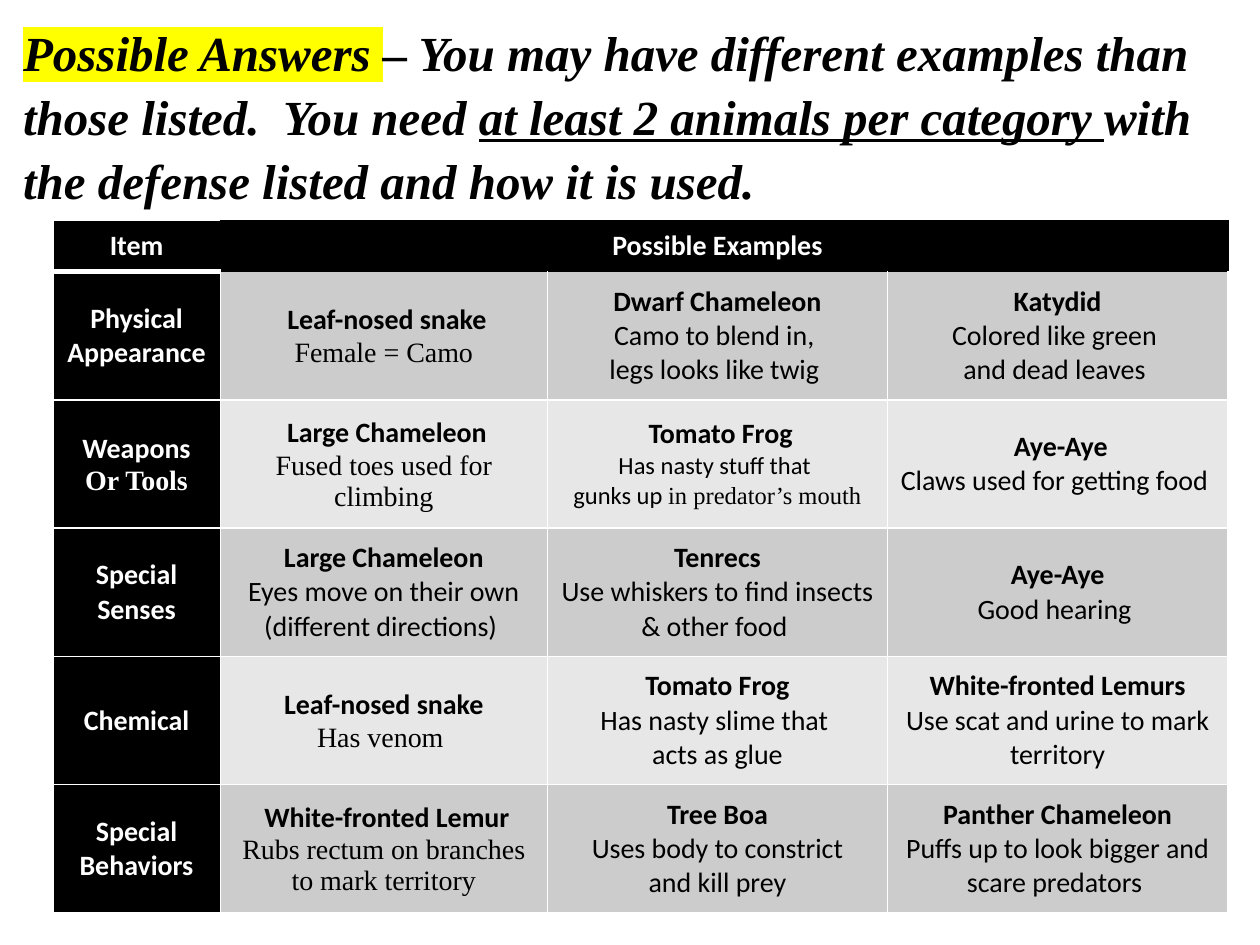
import pptx
import pptx.dml.color
import pptx.enum.text
import pptx.oxml.ns
import pptx.util
from lxml import etree

Pt = pptx.util.Pt
RGBColor = pptx.dml.color.RGBColor
Align = pptx.enum.text.PP_ALIGN
Anchor = pptx.enum.text.MSO_ANCHOR
qn = pptx.oxml.ns.qn

BLACK = RGBColor(0x00, 0x00, 0x00)
WHITE = RGBColor(0xFF, 0xFF, 0xFF)
YELLOW = RGBColor(0xFF, 0xFF, 0x00)
DARK_BAND = RGBColor(0xCC, 0xCC, 0xCC)
LIGHT_BAND = RGBColor(0xE7, 0xE7, 0xE7)

SERIF = {"name": "Times New Roman"}
SMALL = {"size": Pt(14)}
SMALL_SERIF = {**SERIF, **SMALL}

TITLE = [
    ("Possible Answers ", {"highlight": YELLOW}),
    ("– You may have different examples than those listed.  You need ", {}),
    ("at least 2 animals per category ", {"underline": True}),
    ("with the defense listed and how it is used.", {}),
]

# A cell is a list of paragraphs; a paragraph is a string or a list of (text, format) runs.
HEADER = [["Item"], [], ["Possible Examples"], []]
ROWS = [
    [["Physical Appearance"],
     [" Leaf-nosed snake", [("Female = Camo", SERIF)]],
     ["Dwarf Chameleon", "Camo to blend in, \nlegs looks like twig "],
     ["Katydid", "Colored like green \nand dead leaves "]],
    [["Weapons", [("Or Tools", SERIF)]],
     [" Large Chameleon", [("Fused toes used for climbing", SERIF)]],
     [" Tomato Frog", [("Has nasty stuff that ", SMALL)],
      [("gunks up ", SMALL), ("in predator’s mouth", SMALL_SERIF)]],
     [" Aye-Aye", "Claws used for getting food "]],
    [["Special Senses"],
     ["Large Chameleon", "Eyes move on their own", "(different directions) "],
     ["Tenrecs", "Use whiskers to find insects & other food "],
     ["Aye-Aye", "Good hearing "]],
    [["Chemical"],
     ["Leaf-nosed snake", [("Has venom ", SERIF)]],
     ["Tomato Frog", "Has nasty slime that ", "acts as glue"],
     ["White-fronted Lemurs", "Use scat and urine to mark territory"]],
    [["Special Behaviors"],
     [" White-fronted Lemur", [("Rubs rectum on branches to mark territory", SERIF)]],
     ["Tree Boa", "Uses body to constrict\n and kill prey "],
     ["Panther Chameleon", "Puffs up to look bigger and scare predators "]],
]
COLUMN_WIDTHS = [95.7, 186.9, 194.4, 194.4]
HEADER_HEIGHT, ROW_HEIGHT = 29.3, 73.3


class Deck:
    title_style = {"name": "Times New Roman", "size": Pt(28), "bold": True,
                   "italic": True, "color": BLACK}
    cell_style = {"name": "Calibri", "size": Pt(16)}

    def __init__(self, width, height):
        self.prs = pptx.Presentation()
        self.prs.slide_width, self.prs.slide_height = Pt(width), Pt(height)
        self.s = self.prs.slides.add_slide(self.prs.slide_layouts[5])

    def run(self, p, text, style):
        """Add text to a paragraph, turning newlines into line breaks."""
        for i, line in enumerate(text.split("\n")):
            if i:
                p.add_line_break()
            r = p.add_run()
            r.text = line
            for key, value in style.items():
                if key == "color":
                    r.font.color.rgb = value
                elif key != "highlight":
                    setattr(r.font, key, value)
            if "highlight" in style:
                mark = etree.Element(qn("a:highlight"))
                etree.SubElement(mark, qn("a:srgbClr"), val=str(style["highlight"]))
                r.font._element.find(qn("a:solidFill")).addnext(mark)

    def title(self, runs, left, top, width, height):
        sp = self.s.shapes.title
        sp.left, sp.top, sp.width, sp.height = map(Pt, (left, top, width, height))
        tf = sp.text_frame
        tf.word_wrap = True
        tf.auto_size = pptx.enum.text.MSO_AUTO_SIZE.NONE
        tf.vertical_anchor = Anchor.TOP
        p = tf.paragraphs[0]
        p.alignment = Align.LEFT
        p.line_spacing = 1.09
        for text, extra in runs:
            self.run(p, text, {**self.title_style, **extra})

    def borders(self, cell, edges):
        """Draw the L, R, T and B edges, each given as (colour, width)."""
        tcPr = cell._tc.get_or_add_tcPr()
        for i, side in enumerate("LRTB"):
            color, width = edges[side]
            ln = etree.Element(qn("a:ln" + side), w=str(Pt(width)))
            fill = etree.SubElement(ln, qn("a:solidFill"))
            etree.SubElement(fill, qn("a:srgbClr"), val=str(color))
            tcPr.insert(i, ln)

    def cell(self, cell, paragraphs, fill, color, all_bold, edges):
        cell.fill.solid()
        cell.fill.fore_color.rgb = fill
        cell.vertical_anchor = Anchor.MIDDLE
        cell.margin_left = cell.margin_right = Pt(5)
        cell.margin_top = cell.margin_bottom = 0
        self.borders(cell, edges)
        tf = cell.text_frame
        for i, runs in enumerate(paragraphs):
            p = tf.add_paragraph() if i else tf.paragraphs[0]
            p.alignment = Align.CENTER
            style = {**self.cell_style, "color": color, "bold": all_bold or i == 0}
            for text, extra in [(runs, {})] if isinstance(runs, str) else runs:
                self.run(p, text, {**style, **extra})

    def table(self, header, rows, left, top):
        heights = [HEADER_HEIGHT] + [ROW_HEIGHT] * len(rows)
        table = self.s.shapes.add_table(
            len(heights), len(COLUMN_WIDTHS), Pt(left), Pt(top),
            Pt(sum(COLUMN_WIDTHS)), Pt(sum(heights))).table
        for column, width in zip(table.columns, COLUMN_WIDTHS):
            column.width = Pt(width)
        for row, height in zip(table.rows, heights):
            row.height = Pt(height)
        for i, row in enumerate([header] + rows):
            for j, paragraphs in enumerate(row):
                heading = i == 0 or j == 0
                band = DARK_BAND if i % 2 else LIGHT_BAND
                edges = dict.fromkeys("LRTB", (WHITE, 1))
                if i == 0:
                    edges = dict.fromkeys("LRTB", (BLACK, 1))
                    if j == 0:
                        edges.update(L=(WHITE, 1), T=(WHITE, 1), B=(WHITE, 3))
                elif i == 1:
                    edges["T"] = (WHITE, 3) if j == 0 else (BLACK, 1)
                self.cell(table.cell(i, j), paragraphs, BLACK if heading else band,
                          WHITE if heading else BLACK, heading, edges)


def main():
    deck = Deck(720, 540)
    deck.table(HEADER, ROWS, 30.2, 126)
    deck.title(TITLE, 6, 6, 708, 108.7)
    deck.prs.save("out.pptx")


if __name__ == "__main__":
    main()
